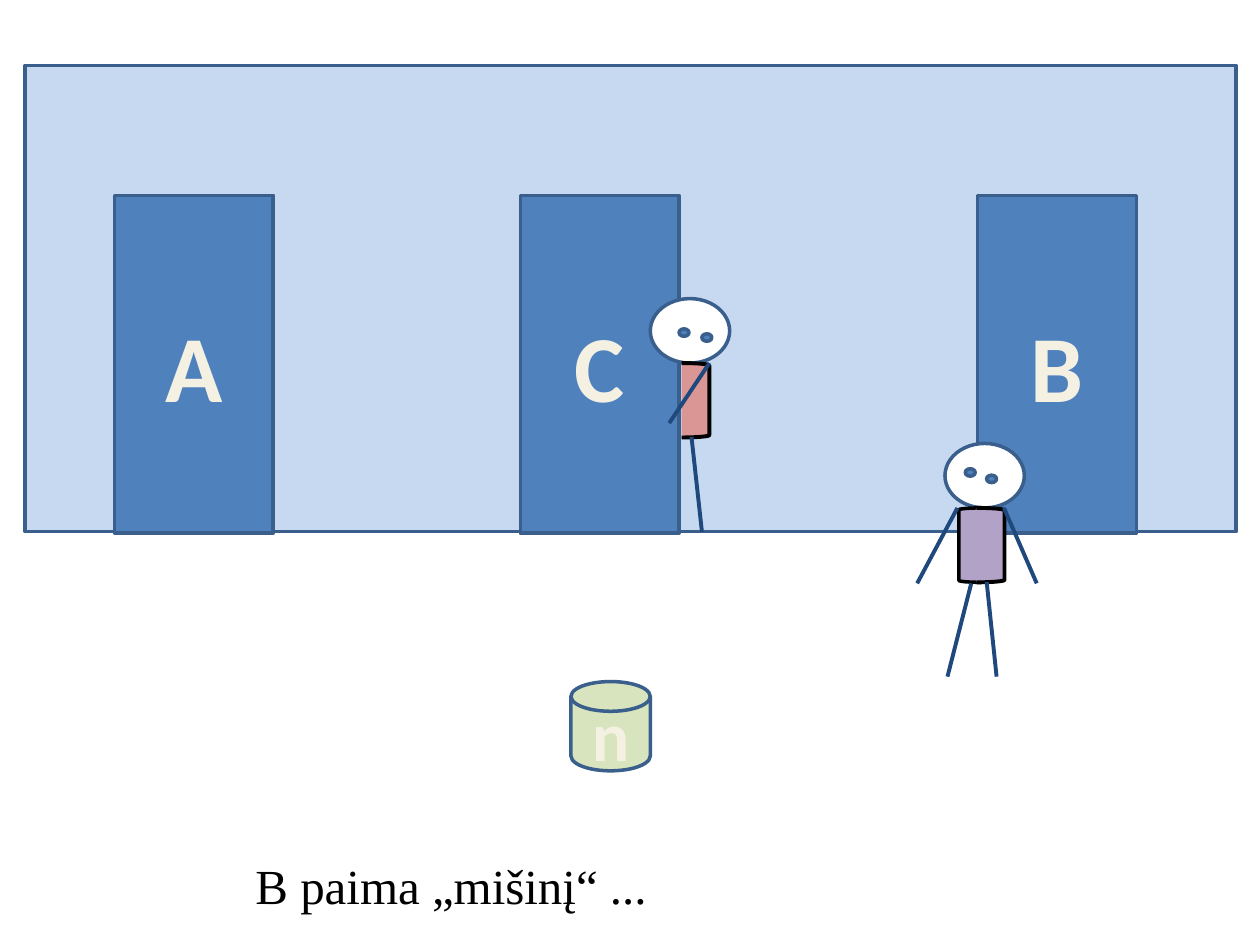
"""Draw a scene with three doors, two stick figures and a marked barrel."""
from dataclasses import dataclass

import pptx
import pptx.dml.color
import pptx.enum.shapes
import pptx.enum.text
import pptx.util
from lxml import etree

Cm = pptx.util.Cm
Pt = pptx.util.Pt
Kind = pptx.enum.shapes.MSO_SHAPE
Align = pptx.enum.text.PP_ALIGN

OUTLINE = "3A5F8C"
BLUE = "4F81BD"
CREAM = "F4F1E3"
LIMB = "1F497D"
BLACK = "000000"
WHITE = "FFFFFF"
LIMB_WIDTH = 2.25
HEAD_SIZE = (1.6, 1.3)
EYE_SIZE = (0.2, 0.15)
DOOR_TOP, DOOR_SIZE = 3.94, (3.2, 6.81)


@dataclass
class Torso:
    kind: pptx.enum.shapes.MSO_SHAPE
    left: float
    width: float
    line_width: float


@dataclass
class Figure:
    head: tuple[float, float]
    eyes: list[tuple[float, float]]
    colour: str
    torso: list[Torso]
    limbs: list[tuple[float, float, float, float]]


@dataclass
class Door:
    letter: str
    left: float


DOORS = [Door("A", 2.31), Door("B", 19.71), Door("C", 10.49)]

TAKER = Figure(
    head=(19.05, 8.94),
    eyes=[(0.41, 0.51), (0.84, 0.64)],
    colour="B3A2C7",
    torso=[Torso(Kind.LEFT_BRACKET, 19.33, 0.46, 2),
           Torso(Kind.RIGHT_BRACKET, 19.69, 0.56, 2.25)],
    limbs=[(19.89, 11.73, 20.09, 13.64), (20.24, 10.24, 20.9, 11.76),
           (19.58, 11.76, 19.1, 13.64), (19.3, 10.24, 18.49, 11.76)],
)
WATCHER = Figure(
    head=(13.11, 6.02),
    eyes=[(0.58, 0.61), (1.04, 0.71)],
    colour="D99694",
    torso=[Torso(Kind.RIGHT_BRACKET, 13.74, 0.56, 2.25)],
    limbs=[(13.94, 8.81, 14.15, 10.72), (14.3, 7.32, 13.49, 8.53)],
)


def rgb(value: str) -> pptx.dml.color.RGBColor:
    """Turn a hex string into a colour."""
    return pptx.dml.color.RGBColor.from_string(value)


def add_box(shapes, kind, left: float, top: float, size: tuple[float, float],
            fill: str, line: str = OUTLINE, line_width: float = 2):
    """Add a filled and outlined preset shape."""
    box = shapes.add_shape(kind, Cm(left), Cm(top), *map(Cm, size))
    box.shadow.inherit = False
    box.fill.solid()
    box.fill.fore_color.rgb = rgb(fill)
    box.line.color.rgb = rgb(line)
    box.line.width = Pt(line_width)
    return box


def write(box, text: str, font: str, size: float, colour: str,
          bold: bool = False, align=Align.LEFT) -> None:
    """Put one styled paragraph in a box."""
    box.text_frame.word_wrap = True
    para = box.text_frame.paragraphs[0]
    para.text = text
    para.alignment = align
    para.font.name = font
    para.font.size = Pt(size)
    para.font.bold = bold
    para.font.color.rgb = rgb(colour)


def add_label(box, text: str, size: float) -> None:
    """Centre a bold cream label in a shape."""
    box.text_frame.vertical_anchor = pptx.enum.text.MSO_ANCHOR.MIDDLE
    write(box, text, "Calibri", size, CREAM, True, Align.CENTER)


def add_limb(shapes, ends: tuple[float, float, float, float]) -> None:
    """Draw a straight arm or leg."""
    limb = shapes.add_connector(
        pptx.enum.shapes.MSO_CONNECTOR.STRAIGHT, *map(Cm, ends))
    limb.line.color.rgb = rgb(LIMB)
    limb.line.width = Pt(LIMB_WIDTH)
    etree.SubElement(limb._element.spPr, pptx.oxml.ns.qn("a:effectLst"))


def add_figure(shapes, figure: Figure) -> None:
    """Draw a stick figure from head to legs."""
    left, top = figure.head
    add_box(shapes, Kind.OVAL, left, top, HEAD_SIZE, WHITE)
    for across, down in figure.eyes:
        add_box(shapes, Kind.OVAL, left + across, top + down, EYE_SIZE, BLUE)
    for part in figure.torso:
        add_box(shapes, part.kind, part.left, top + HEAD_SIZE[1],
                (part.width, 1.5), figure.colour, BLACK, part.line_width)
    for ends in figure.limbs:
        add_limb(shapes, ends)


def main() -> None:
    """Build and save the deck."""
    deck = pptx.Presentation()
    deck.slide_width, deck.slide_height = Cm(25.4), Cm(19.05)
    page = deck.slides.add_slide(deck.slide_layouts[6])
    shapes = page.shapes

    add_box(shapes, Kind.RECTANGLE, 0.51, 1.32, (24.41, 9.4), "C6D9F1")
    for door in DOORS:
        panel = add_box(shapes, Kind.RECTANGLE, door.left, DOOR_TOP, DOOR_SIZE, BLUE)
        add_label(panel, door.letter, 54)

    barrel = add_box(shapes, Kind.FLOWCHART_MAGNETIC_DISK, 11.51, 13.74,
                     (1.6, 1.8), "D7E4BD")
    add_label(barrel, "n", 40)

    add_figure(shapes.add_group_shape().shapes, TAKER)
    add_figure(shapes, WATCHER)

    caption = shapes.add_textbox(Cm(4.9), Cm(17.12), Cm(19.79), Cm(1.45))
    write(caption, "B paima „mišinį“ ...", "Times New Roman", 28, BLACK)
    caption.text_frame.auto_size = pptx.enum.text.MSO_AUTO_SIZE.SHAPE_TO_FIT_TEXT
    deck.save("out.pptx")


if __name__ == "__main__":
    main()
